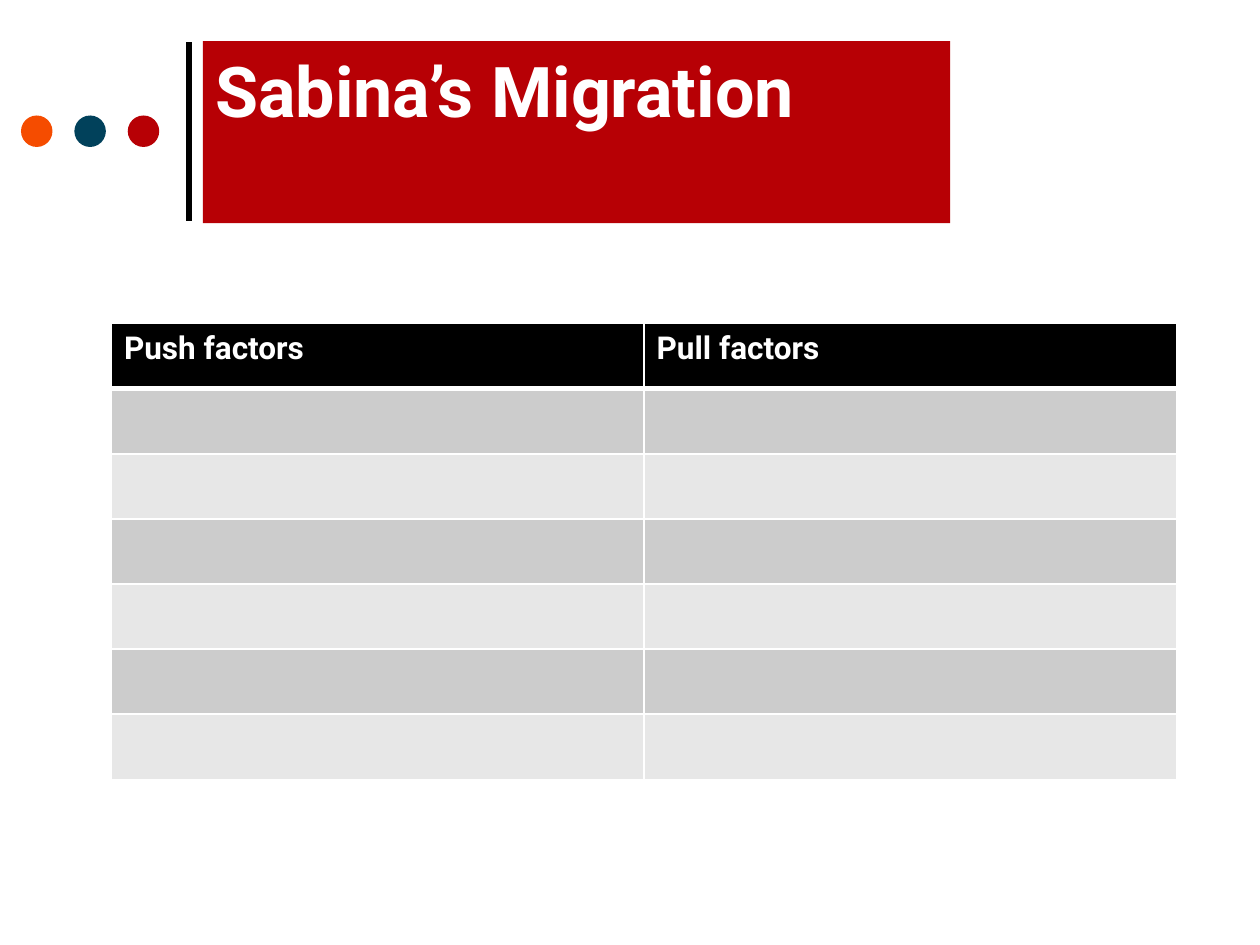
"""Build the slide with the push and pull factors of Sabina's migration."""
import pptx
import pptx.dml.color
import pptx.enum.shapes
import pptx.enum.text
import pptx.oxml
import pptx.oxml.ns
import pptx.util
from lxml import etree

Pt = pptx.util.Pt
RGBColor = pptx.dml.color.RGBColor
MSO_SHAPE = pptx.enum.shapes.MSO_SHAPE
qn = pptx.oxml.ns.qn

BLACK = RGBColor(0x00, 0x00, 0x00)
WHITE = RGBColor(0xFF, 0xFF, 0xFF)
ORANGE = RGBColor(0xF5, 0x4C, 0x00)
NAVY = RGBColor(0x01, 0x41, 0x5B)
RED = RGBColor(0xB7, 0x00, 0x05)
DARK_BAND = RGBColor(0xCC, 0xCC, 0xCC)
LIGHT_BAND = RGBColor(0xE7, 0xE7, 0xE7)

FONT = "Roboto"
TITLE = "Sabina’s Migration"
HEADINGS = ["Push factors", "Pull factors"]
EMPTY_ROWS = 6
DOT_COLORS = [ORANGE, NAVY, RED]

DOT_LEFT, DOT_TOP, DOT_SIZE, DOT_STEP = 12, 66, 18, 30.5
BAR_X, BAR_TOP, BAR_BOTTOM = 108, 24, 126
TITLE_BOX = (116, 23.5, 427, 104)
TABLE_LEFT, TABLE_TOP, COLUMN_WIDTH, ROW_HEIGHT = 63.7, 185, 304.3, 37.2


def add_filled(slide, kind, box, color):
    shape = slide.shapes.add_shape(kind, *map(Pt, box))
    shape.shadow.inherit = False
    shape.fill.solid()
    shape.fill.fore_color.rgb = color
    shape.line.fill.background()
    return shape


def write(text_frame, text, size):
    paragraph = text_frame.paragraphs[0]
    paragraph.text = text
    paragraph.alignment = pptx.enum.text.PP_ALIGN.LEFT
    paragraph.font.name = FONT
    paragraph.font.size = Pt(size)
    paragraph.font.bold = True
    paragraph.font.color.rgb = WHITE


def add_borders(cell, bottom_width):
    properties = cell._tc.get_or_add_tcPr()
    for side, width in (("L", 1), ("R", 1), ("T", 1), ("B", bottom_width)):
        border = etree.SubElement(properties, qn(f"a:ln{side}"), w=str(Pt(width)))
        fill = etree.SubElement(border, qn("a:solidFill"))
        etree.SubElement(fill, qn("a:srgbClr"), val=str(WHITE))


def add_factor_table(slide):
    row_count = EMPTY_ROWS + 1
    factors = slide.shapes.add_table(
        row_count, len(HEADINGS), Pt(TABLE_LEFT), Pt(TABLE_TOP),
        Pt(COLUMN_WIDTH * len(HEADINGS)), Pt(ROW_HEIGHT * row_count)).table
    for column in factors.columns:
        column.width = Pt(COLUMN_WIDTH)
    for index, row in enumerate(factors.rows):
        row.height = Pt(ROW_HEIGHT)
        band = DARK_BAND if index % 2 else LIGHT_BAND
        for cell in row.cells:
            add_borders(cell, 1 if index else 3)
            cell.fill.solid()
            cell.fill.fore_color.rgb = band if index else BLACK
    for column_index, heading in enumerate(HEADINGS):
        write(factors.cell(0, column_index).text_frame, heading, 18)


def main():
    deck = pptx.Presentation()
    deck.slide_width, deck.slide_height = Pt(720), Pt(540)
    slide = deck.slides.add_slide(deck.slide_layouts[6])

    bar = slide.shapes.add_connector(
        pptx.enum.shapes.MSO_CONNECTOR.STRAIGHT,
        Pt(BAR_X), Pt(BAR_BOTTOM), Pt(BAR_X), Pt(BAR_TOP))
    bar.line.color.rgb = BLACK
    bar.line.width = Pt(3)
    etree.SubElement(bar._element.spPr, qn("a:effectLst"))

    for index, color in enumerate(DOT_COLORS):
        dot_left = DOT_LEFT + index * DOT_STEP
        add_filled(slide, MSO_SHAPE.OVAL, (dot_left, DOT_TOP, DOT_SIZE, DOT_SIZE), color)

    title = add_filled(slide, MSO_SHAPE.RECTANGLE, TITLE_BOX, RED)
    title.text_frame.vertical_anchor = pptx.enum.text.MSO_ANCHOR.TOP
    write(title.text_frame, TITLE, 40)

    add_factor_table(slide)
    deck.save("out.pptx")


if __name__ == "__main__":
    main()
